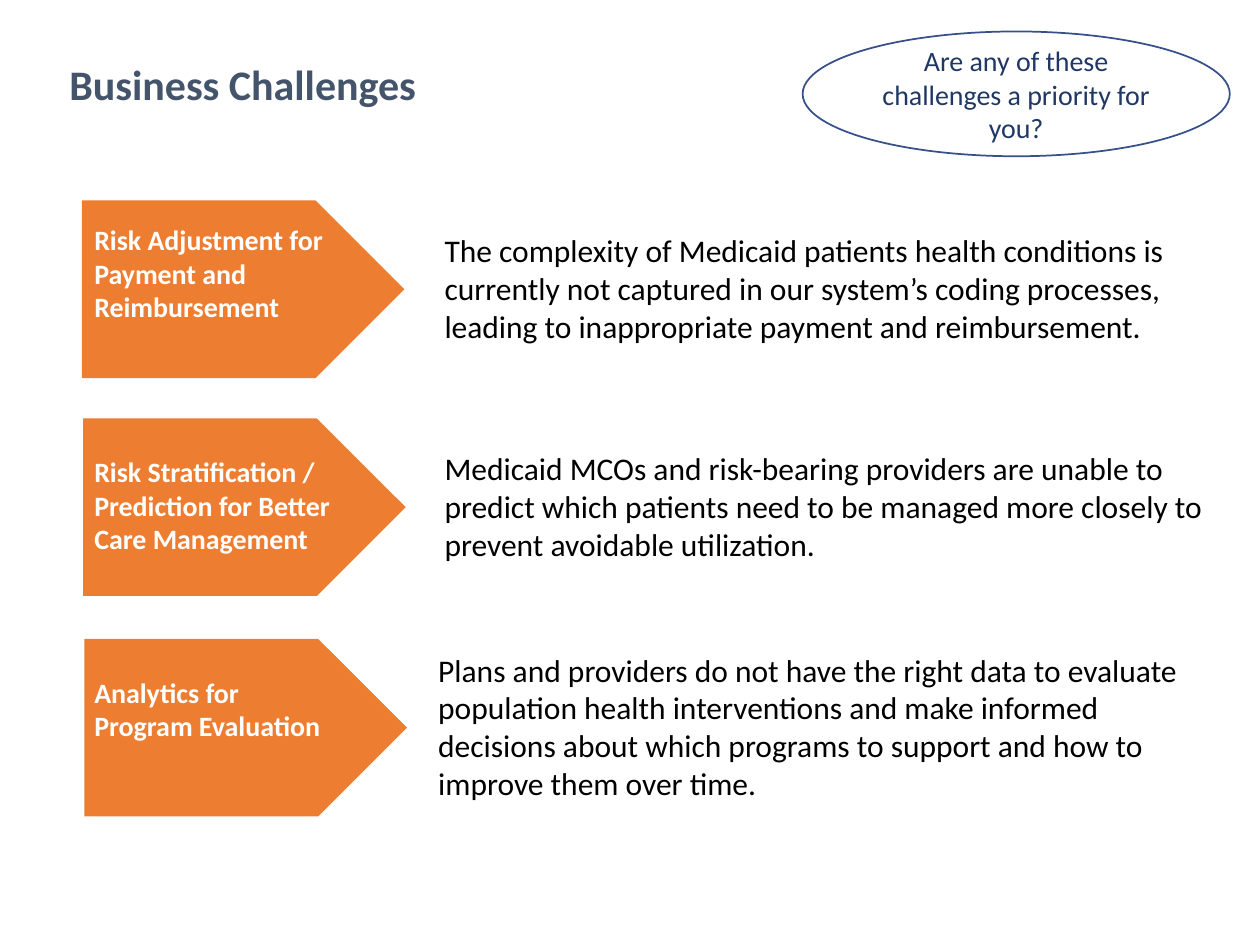
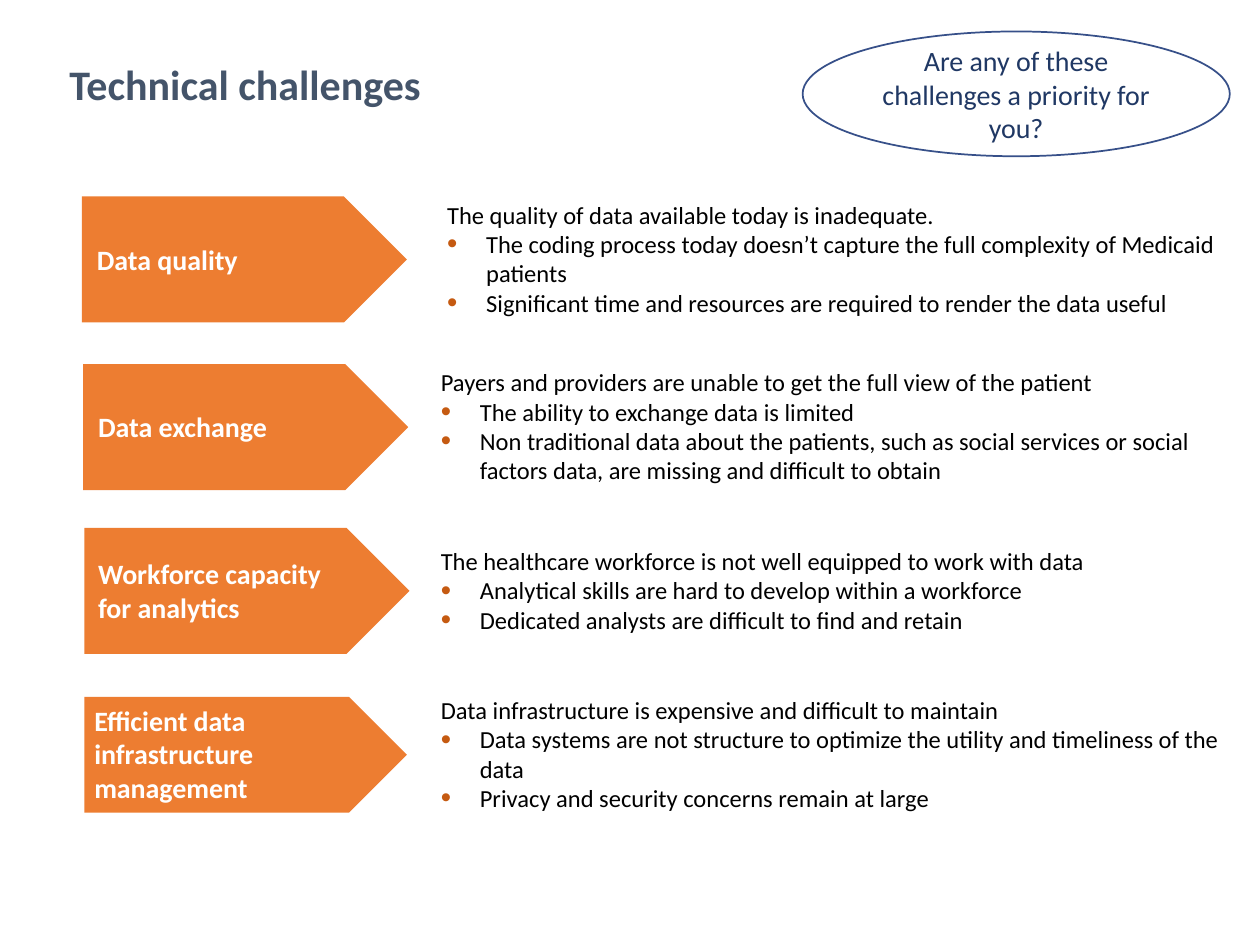
from dataclasses import dataclass

from lxml import etree
from pptx import Presentation
from pptx import util as u
from pptx.dml.color import RGBColor
from pptx.enum import shapes, text
from pptx.oxml.ns import qn

COLORS = {
    "title": "44546A", "arrow": "ED7D31", "label": "FFFFFF", "body": "000000",
    "bullet": "C55A11", "outline": "375089", "question": "203864",
}
FONT = "Calibri"
WIDTH, HEIGHT = u.Inches(10), u.Inches(7.5)
COLUMN, ROW = WIDTH / 100, HEIGHT / 75  # square grid: 100 columns, 75 rows
LINE_ROWS = 1.22 * 10 / 72  # grid rows taken by a line, per point of text size
INSET_ROWS = 1  # top and bottom text insets together
QUESTION = "Are any of these challenges a priority for you?"


@dataclass
class Challenge:
    box: tuple  # left, top, width, height of the arrow on the grid
    label: str
    label_lines: int
    label_left: float  # from the arrow's left edge
    label_width: float
    body: list  # first paragraph plain, the others bulleted
    body_lines: int
    body_left: float  # from the arrow's left edge
    lift: float = 0  # rows the label sits above the arrow's middle


def grid(left, top, width, height):
    return [round(value * step) for value, step
            in zip((left, top, width, height), (COLUMN, ROW, COLUMN, ROW))]


def color(name):
    return RGBColor.from_string(COLORS[name])


def add_bullet(paragraph):
    properties = paragraph._p.get_or_add_pPr()
    properties.set("marL", str(u.Inches(0.31)))
    properties.set("indent", str(-u.Inches(0.31)))
    bullet_color = etree.SubElement(properties, qn("a:buClr"))
    etree.SubElement(bullet_color, qn("a:srgbClr"), val=COLORS["bullet"])
    etree.SubElement(properties, qn("a:buSzPct"), val="120000")
    etree.SubElement(properties, qn("a:buFont"), typeface="Arial")
    etree.SubElement(properties, qn("a:buChar"), char="•")


def write(shape, paragraphs, *, size, fill, bold=False, spacing=None,
          align=text.PP_ALIGN.LEFT, anchor=text.MSO_ANCHOR.TOP):
    frame = shape.text_frame
    frame.word_wrap = True
    frame.auto_size = text.MSO_AUTO_SIZE.NONE
    frame.vertical_anchor = anchor
    for index, words in enumerate(paragraphs):
        paragraph = frame.add_paragraph() if index else frame.paragraphs[0]
        paragraph.alignment = align
        if spacing:
            paragraph.line_spacing = spacing
        if index:
            add_bullet(paragraph)
        run = paragraph.add_run()
        run.text = words
        run.font.name, run.font.size, run.font.bold = FONT, u.Pt(size), bold
        run.font.color.rgb = color(fill)


def add_title(slide, box, words):
    title = slide.shapes.title
    title.left, title.top, title.width, title.height = grid(*box)
    write(title, [words], size=24, fill="title", bold=True, spacing=0.9,
          anchor=text.MSO_ANCHOR.MIDDLE)


def add_question(slide, box):
    ellipse = slide.shapes.add_shape(shapes.MSO_SHAPE.OVAL, *grid(*box))
    ellipse.shadow.inherit = False
    ellipse.fill.background()
    ellipse.line.color.rgb = color("outline")
    ellipse.line.width = u.Pt(1)
    write(ellipse, [QUESTION], size=16, fill="question",
          align=text.PP_ALIGN.CENTER, anchor=text.MSO_ANCHOR.MIDDLE)


def add_centered_text(slide, left, middle, width, lines, paragraphs, **style):
    """Text box as tall as its lines, centred on a grid row."""
    height = lines * style["size"] * LINE_ROWS + INSET_ROWS
    box = slide.shapes.add_textbox(*grid(left, middle - height / 2, width, height))
    write(box, paragraphs, **style)


def add_challenge(slide, challenge, body_width, body_size):
    left, top, _, height = challenge.box
    middle = top + height / 2
    arrow = slide.shapes.add_shape(shapes.MSO_SHAPE.PENTAGON, *grid(*challenge.box))
    arrow.shadow.inherit = False
    arrow.fill.solid()
    arrow.fill.fore_color.rgb = color("arrow")
    arrow.line.fill.background()
    add_centered_text(slide, left + challenge.label_left, middle - challenge.lift,
                      challenge.label_width, challenge.label_lines,
                      [challenge.label], size=16, fill="label", bold=True)
    add_centered_text(slide, left + challenge.body_left, middle, body_width,
                      challenge.body_lines, challenge.body,
                      size=body_size, fill="body")


def add_challenge_slide(presentation, title, challenges, body_width, body_size):
    slide = presentation.slides.add_slide(presentation.slide_layouts[5])
    add_title(slide, (4.5, 4.8, 90.6, 4.2), title)
    for challenge in challenges:
        add_challenge(slide, challenge, body_width, body_size)
    add_question(slide, (63.7, 2.5, 33.9, 9.9))


BUSINESS = [
    Challenge((6.5, 15.9, 25.6, 14.1),
              "Risk Adjustment for Payment and Reimbursement", 3, 0, 27.6,
              ["The complexity of Medicaid patients health conditions is currently "
               "not captured in our system’s coding processes, leading to "
               "inappropriate payment and reimbursement."], 3, 27.8, lift=1.2),
    Challenge((6.6, 33.2, 25.6, 14.1),
              "Risk Stratification / Prediction for Better Care Management",
              3, -0.1, 24.3,
              ["Medicaid MCOs and risk-bearing providers are unable to predict "
               "which patients need to be managed more closely to prevent "
               "avoidable utilization."], 3, 27.7, lift=0.1),
    Challenge((6.7, 50.7, 25.6, 14.1),
              "Analytics for Program Evaluation", 2, -0.2, 21.7,
              ["Plans and providers do not have the right data to evaluate "
               "population health interventions and make informed decisions about "
               "which programs to support and how to improve them over time."],
              4, 27.1, lift=1.45),
]

TECHNICAL = [
    Challenge((6.5, 15.6, 25.8, 10), "Data quality", 1, 0.2, 27.8,
              ["The quality of data available today is inadequate.",
               "The coding process today doesn’t capture the full complexity of "
               "Medicaid patients",
               "Significant time and resources are required to render the data "
               "useful"], 4, 28),
    Challenge((6.6, 28.9, 25.8, 10), "Data exchange", 1, 0.2, 24.5,
              ["Payers and providers are unable to get the full view of the patient",
               "The ability to exchange data is limited",
               "Non traditional data about the patients, such as social services "
               "or social factors data, are missing and difficult to obtain"],
              4, 27.4),
    Challenge((6.7, 41.9, 25.8, 10), "Workforce capacity for analytics",
              2, 0.1, 21.9,
              ["The healthcare workforce is not well equipped to work with data",
               "Analytical skills are hard to develop within a workforce",
               "Dedicated analysts are difficult to find and retain"], 3, 27.3),
    Challenge((6.7, 55.3, 25.6, 9.2), "Efficient data infrastructure management",
              3, -0.2, 24.3,
              ["Data infrastructure is expensive and difficult to maintain",
               "Data systems are not structure to optimize the utility and "
               "timeliness of the data",
               "Privacy and security concerns remain at large"], 4, 27.3),
]


def main():
    presentation = Presentation()
    presentation.slide_width, presentation.slide_height = WIDTH, HEIGHT
    add_challenge_slide(presentation, "Business Challenges", BUSINESS, 63.4, 18)
    add_challenge_slide(presentation, "Technical challenges", TECHNICAL, 63.9, 14)
    presentation.save("out.pptx")


if __name__ == "__main__":
    main()
